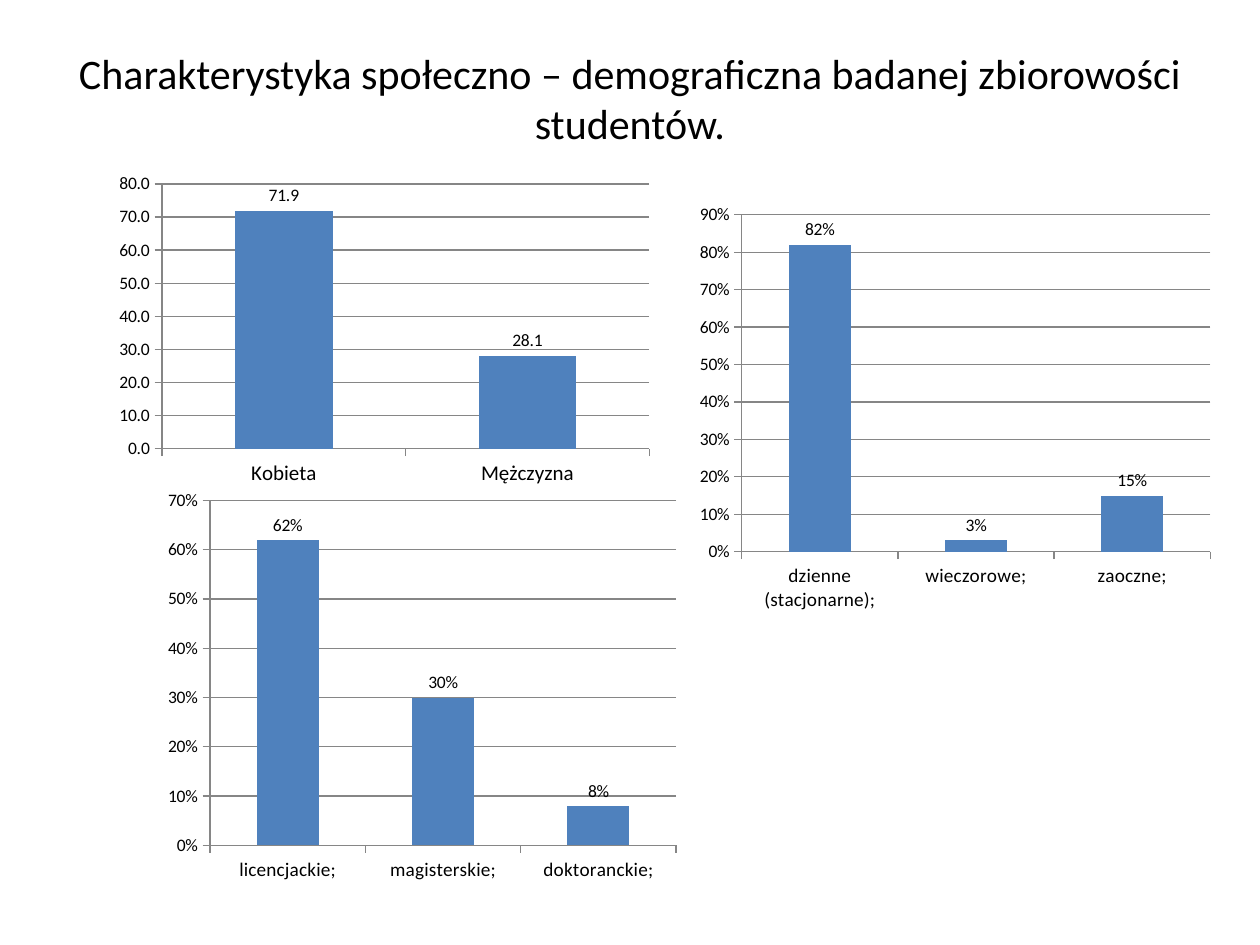
from dataclasses import dataclass

from pptx import Presentation
from pptx.chart.data import CategoryChartData
from pptx.dml.color import RGBColor
from pptx.enum.chart import XL_CHART_TYPE as ChartType
from pptx.enum.chart import XL_LABEL_POSITION as LabelPosition
from pptx.enum.chart import XL_TICK_MARK as TickMark
from pptx.enum.text import MSO_ANCHOR as Anchor
from pptx.enum.text import PP_ALIGN as Align
from pptx.util import Inches, Pt


@dataclass(frozen=True)
class Theme:
    font: str = "Calibri"
    ink: RGBColor = RGBColor(0, 0, 0)
    bar: RGBColor = RGBColor(0x4F, 0x81, 0xBD)
    rule: RGBColor = RGBColor(0x86, 0x86, 0x86)
    title: int = 24
    body: int = 10


class Page:
    """Places styled elements on a slide by a grid of 40 columns and 30 rows."""

    def __init__(self, deck, theme):
        self.theme = theme
        self.column = deck.slide_width / 40
        self.row = deck.slide_height / 30
        self.shapes = deck.slides.add_slide(deck.slide_layouts[6]).shapes

    def place(self, left, top, width, height):
        return (round(left * self.column), round(top * self.row),
                round(width * self.column), round(height * self.row))

    def style(self, font, size):
        font.name, font.size = self.theme.font, Pt(size)
        font.color.rgb = self.theme.ink

    def title(self, text, area):
        box = self.shapes.add_textbox(*self.place(*area))
        frame = box.text_frame
        frame.text = text
        frame.word_wrap = True
        frame.vertical_anchor = Anchor.MIDDLE
        para = frame.paragraphs[0]
        para.alignment = Align.CENTER
        self.style(para.runs[0].font, self.theme.title)

    def columns(self, area, values, top_value, step, number_format, category_size):
        chart_data = CategoryChartData(number_format=number_format)
        chart_data.categories = list(values)
        chart_data.add_series("Series 1", list(values.values()))
        chart = self.shapes.add_chart(
            ChartType.COLUMN_CLUSTERED, *self.place(*area), chart_data).chart
        chart.has_legend = chart.has_title = False
        self.style(chart.font, self.theme.body)
        self.axes(chart, top_value, step, number_format, category_size)
        plot = chart.plots[0]
        plot.gap_width = 150
        plot.vary_by_categories = False
        fill = plot.series[0].format.fill
        fill.solid()
        fill.fore_color.rgb = self.theme.bar
        self.labels(plot.series[0].data_labels, number_format)

    def axes(self, chart, top_value, step, number_format, category_size):
        scale = chart.value_axis
        scale.minimum_scale, scale.maximum_scale = 0, top_value
        scale.major_unit = step
        scale.has_major_gridlines = True
        scale.tick_labels.number_format = number_format
        scale.tick_labels.number_format_is_linked = False
        for axis, size in ((chart.category_axis, category_size),
                           (scale, self.theme.body)):
            axis.major_tick_mark = TickMark.OUTSIDE
            self.style(axis.tick_labels.font, size)
        for part in (chart.category_axis, scale, scale.major_gridlines):
            part.format.line.color.rgb = self.theme.rule
            part.format.line.width = Pt(0.75)

    def labels(self, labels, number_format):
        labels.show_value = True
        labels.number_format = number_format
        labels.number_format_is_linked = False
        labels.position = LabelPosition.OUTSIDE_END
        self.style(labels.font, self.theme.body)


def main():
    deck = Presentation()
    deck.slide_width, deck.slide_height = Inches(10), Inches(7.5)
    page = Page(deck, Theme())
    page.title("Charakterystyka społeczno – demograficzna badanej zbiorowości studentów.",
               (2, 1.2, 36, 3.8))
    gender = {"Kobieta": 71.9, "Mężczyzna": 28.1}
    mode = {"dzienne (stacjonarne);": 0.82, "wieczorowe;": 0.03, "zaoczne;": 0.15}
    degree = {"licencjackie;": 0.62, "magisterskie;": 0.3, "doktoranckie;": 0.08}
    page.columns((3.44, 5.32, 17.52, 10.32), gender, 80, 10, "###0.0", 12)
    page.columns((21.88, 6.24, 16.88, 13.44), mode, 0.9, 0.1, "0%", 11)
    page.columns((5, 15.32, 16.8, 12.92), degree, 0.7, 0.1, "0%", 11)
    deck.save("out.pptx")


if __name__ == "__main__":
    main()
